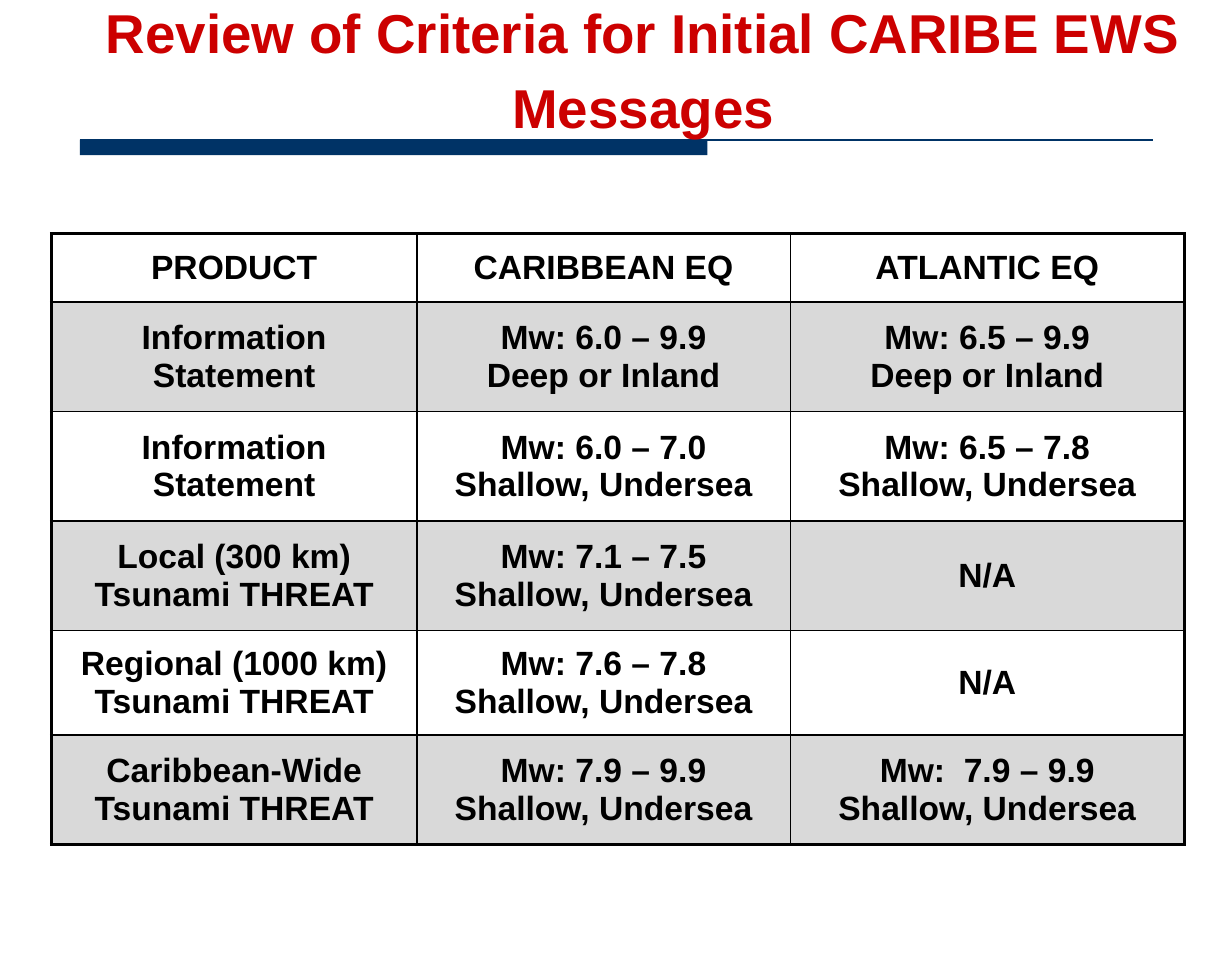
"""Build a slide with the criteria table for initial tsunami messages."""
from lxml.etree import SubElement
from pptx import Presentation
from pptx.dml.color import RGBColor
from pptx.enum.shapes import MSO_CONNECTOR, MSO_SHAPE
from pptx.enum.text import MSO_ANCHOR as Anchor, PP_ALIGN as Align
from pptx.oxml.ns import qn
from pptx.util import Cm, Pt

TITLE = "Review of Criteria for Initial CARIBE EWS Messages"
UNDERSEA = "Shallow, Undersea"
INLAND = "Deep or Inland"
THREAT = "Tsunami THREAT"
ROWS = [
    (["PRODUCT"], ["CARIBBEAN EQ"], ["ATLANTIC EQ"]),
    (["Information", "Statement"], ["Mw: 6.0 – 9.9", INLAND], ["Mw: 6.5 – 9.9", INLAND]),
    (["Information", "Statement"], ["Mw: 6.0 – 7.0", UNDERSEA], ["Mw: 6.5 – 7.8", UNDERSEA]),
    (["Local (300 km)", THREAT], ["Mw: 7.1 – 7.5", UNDERSEA], ["N/A"]),
    (["Regional (1000 km)", THREAT], ["Mw: 7.6 – 7.8", UNDERSEA], ["N/A"]),
    (["Caribbean-Wide", THREAT], ["Mw: 7.9 – 9.9", UNDERSEA], ["Mw:  7.9 – 9.9", UNDERSEA]),
]
COLUMN_WIDTHS = [7.68, 7.84, 8.28]
ROW_HEIGHTS = [1.44, 2.3, 2.3, 2.3, 2.2, 2.3]

FONT = "Arial"
RED = RGBColor(0xCC, 0x00, 0x00)
NAVY = RGBColor(0x00, 0x33, 0x66)
BLACK = RGBColor(0x00, 0x00, 0x00)
WHITE = RGBColor(0xFF, 0xFF, 0xFF)
GREY = RGBColor(0xD9, 0xD9, 0xD9)
OUTER, INNER = Pt(2.25), Pt(1)


def write(frame, lines, size, color, spacing=None):
    """Write centred bold lines, one paragraph each."""
    for index, line in enumerate(lines):
        para = frame.add_paragraph() if index else frame.paragraphs[0]
        para.alignment = Align.CENTER
        if spacing:
            para.line_spacing = spacing
        span = para.add_run()
        span.text = line
        span.font.name = FONT
        span.font.size = Pt(size)
        span.font.bold = True
        span.font.color.rgb = color


def add_borders(cell, outer_sides):
    """Draw the four cell borders, thicker on the table's outer sides."""
    properties = cell._tc.get_or_add_tcPr()
    for index, (side, is_outer) in enumerate(outer_sides.items()):
        line = properties.makeelement(qn(f"a:ln{side}"), {"w": str(OUTER if is_outer else INNER)})
        fill = SubElement(line, qn("a:solidFill"))
        SubElement(fill, qn("a:srgbClr"), val=str(BLACK))
        properties.insert(index, line)


def add_rule(page):
    """Add the thick bar and the thin line under the title."""
    left, top = Cm(1.68), Cm(2.94)
    bar = page.shapes.add_shape(MSO_SHAPE.RECTANGLE, left, top, Cm(13.18), Cm(0.32))
    bar.shadow.inherit = False
    bar.fill.solid()
    bar.fill.fore_color.rgb = NAVY
    bar.line.fill.background()
    line = page.shapes.add_connector(MSO_CONNECTOR.STRAIGHT, left, top, left + Cm(22.53), top)
    line.line.color.rgb = NAVY
    line.line.width = Pt(0.75)
    SubElement(line._element.spPr, qn("a:effectLst"))


def add_criteria(page):
    """Add the table of message criteria."""
    table = page.shapes.add_table(
        len(ROWS), len(COLUMN_WIDTHS), Cm(1.08), Cm(4.91),
        Cm(sum(COLUMN_WIDTHS)), Cm(sum(ROW_HEIGHTS))).table
    for column, width in zip(table.columns, COLUMN_WIDTHS):
        column.width = Cm(width)
    for row, height in zip(table.rows, ROW_HEIGHTS):
        row.height = Cm(height)
    last_row, last_column = len(ROWS) - 1, len(COLUMN_WIDTHS) - 1
    for r, row in enumerate(ROWS):
        for c, lines in enumerate(row):
            cell = table.cell(r, c)
            cell.vertical_anchor = Anchor.MIDDLE
            cell.fill.solid()
            cell.fill.fore_color.rgb = GREY if r % 2 else WHITE
            write(cell.text_frame, lines, 20, BLACK)
            add_borders(cell, {"L": c == 0, "R": c == last_column,
                               "T": r == 0, "B": r == last_row})


def add_title(page):
    """Add the slide title."""
    box = page.shapes.add_textbox(Cm(1.63), Cm(0.89), Cm(23.77), Cm(2.16))
    frame = box.text_frame
    frame.word_wrap = True
    frame.vertical_anchor = Anchor.BOTTOM
    write(frame, [TITLE], 32.6, RED, 1.14)


def main():
    """Build and save the deck."""
    deck = Presentation()
    deck.slide_width, deck.slide_height = Cm(25.88), Cm(20.32)
    page = deck.slides.add_slide(deck.slide_layouts[6])
    add_rule(page)
    add_criteria(page)
    add_title(page)
    deck.save("out.pptx")


if __name__ == "__main__":
    main()
